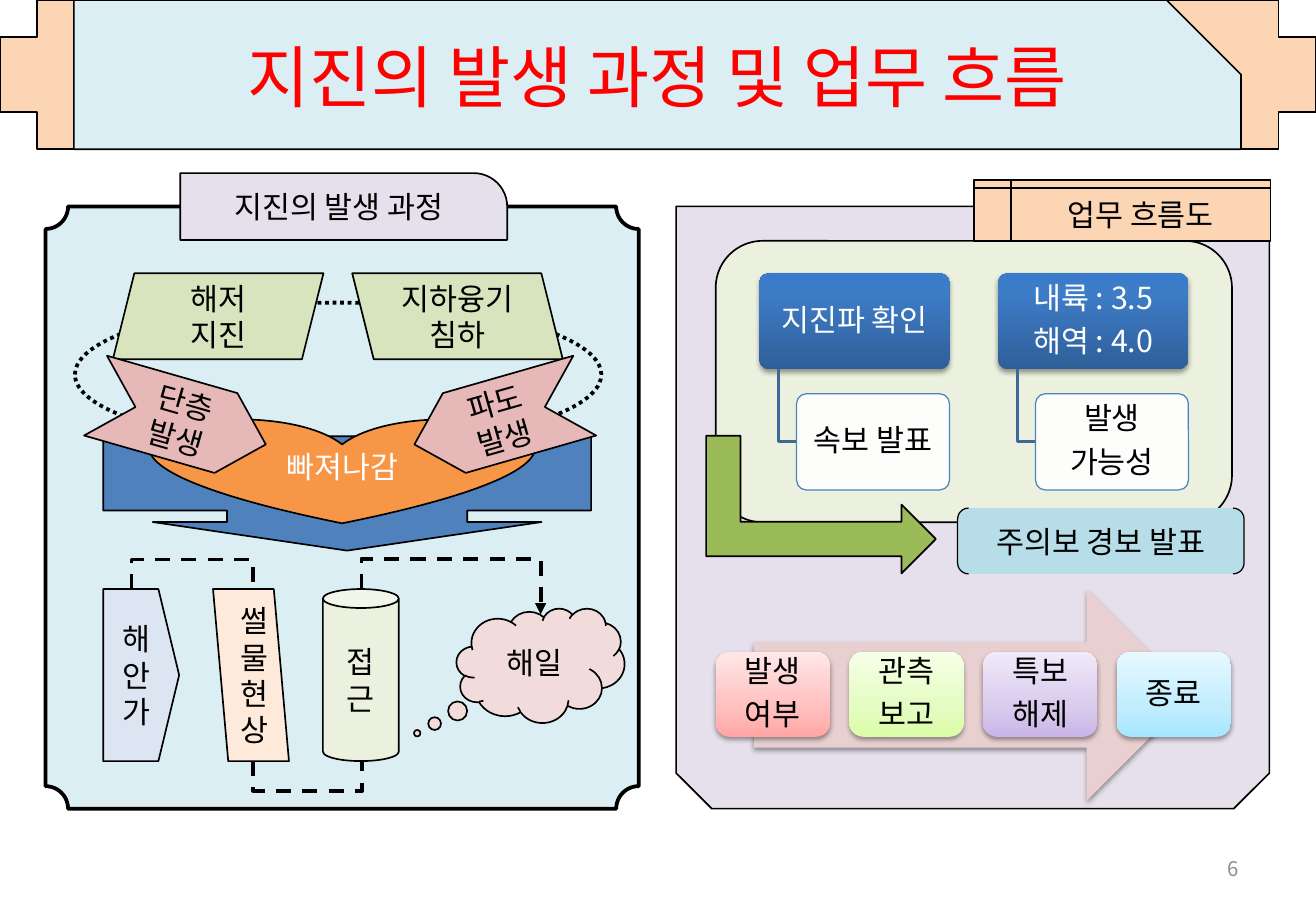
import lxml.etree
import pptx
import pptx.dml.color
import pptx.enum.dml
import pptx.enum.shapes
import pptx.enum.text
import pptx.oxml.ns
import pptx.util

SHAPE = pptx.enum.shapes.MSO_SHAPE
ALIGN = pptx.enum.text.PP_ALIGN
DASH = pptx.enum.dml.MSO_LINE
Pt = pptx.util.Pt
qn = pptx.oxml.ns.qn

FONT = "Noto Sans CJK KR"
COLUMNS, ROWS = 130, 90
CELL = pptx.util.Inches(1) / 12
COLORS = {
    "black": "000000", "white": "FFFFFF", "title": "FF0000", "number": "8C8C8C",
    "peach": "FCD5B5", "sky": "DBEEF4", "lilac": "E6E0EC", "blue": "4F81BD",
    "leaf": "D7E4BD", "orange": "F79646", "rose": "E6B9B8", "coast": "DCE6F2",
    "ebb": "FDEADA", "mint": "EBF1DE", "wave": "F2DCDB", "flow": "E8D0D0",
    "branch": "FDFEFC", "tree": "3F6797", "green": "9BBB59", "alert": "B7DEE8",
}
# Gradients: (position in percent, colour) from bottom to top
GRADIENTS = {
    "red step": ((0, "FFA6A5"), (35, "FFC0BF"), (100, "FFE7E7")),
    "green step": ((0, "DAFDA7"), (35, "E4FCC2"), (100, "F5FFE7")),
    "violet step": ((0, "C9B5E8"), (35, "D8CBEE"), (100, "F0EAF9")),
    "blue step": ((0, "A7E6FF"), (35, "C1EDFF"), (100, "E7F8FF")),
    "head": ((0, "2F5F99"), (80, "3D7CC7"), (100, "3A7CCB")),
}


def cells(*counts):
    return [round(count * CELL) for count in counts]


def rgb(color):
    return pptx.dml.color.RGBColor.from_string(COLORS[color])


def add_element(parent, tag, **attributes):
    return lxml.etree.SubElement(parent, qn(tag), attributes)


def set_line(line, color, width, dash=None):
    if color is None:
        line.fill.background()
        return
    line.color.rgb = rgb(color)
    line.width = Pt(width)
    if dash:
        line.dash_style = dash


def set_fill(shape, fill):
    if fill is None:
        shape.fill.background()
    elif fill in GRADIENTS:
        shape.fill.gradient()
        shape.fill.gradient_angle = 90
        stops = shape._element.spPr.find(qn("a:gradFill")).find(qn("a:gsLst"))
        stops.clear()
        for position, color in GRADIENTS[fill]:
            stop = add_element(stops, "a:gs", pos=str(position * 1000))
            add_element(stop, "a:srgbClr", val=color)
    else:
        shape.fill.solid()
        shape.fill.fore_color.rgb = rgb(fill)


def add_shadow(shape, alpha=38):
    effects = shape._element.spPr.find(qn("a:effectLst"))
    shadow = add_element(effects, "a:outerShdw", blurRad=str(Pt(3.1)),
                         dist=str(Pt(1.7)), dir="5400000", rotWithShape="0")
    color = add_element(shadow, "a:srgbClr", val=COLORS["black"])
    add_element(color, "a:alpha", val=str(alpha * 1000))


def write(shape, text, color="black", size=18, align=ALIGN.CENTER, insets=None, spaced=False):
    frame = shape.text_frame
    frame.text = text
    frame.word_wrap = True
    frame.vertical_anchor = pptx.enum.text.MSO_ANCHOR.MIDDLE
    if insets:
        side, edge = (pptx.util.Inches(inset) for inset in insets)
        frame.margin_left = frame.margin_right = side
        frame.margin_top = frame.margin_bottom = edge
    for paragraph in frame.paragraphs:
        paragraph.alignment = align
        if spaced:
            paragraph.line_spacing = 0.9
            paragraph.space_after = Pt(6.3)
        for run in paragraph.runs:
            run.font.size = Pt(size)
            run.font.name = FONT
            run.font.color.rgb = rgb(color)
            add_element(run._r.get_or_add_rPr(), "a:ea", typeface=FONT)


def add_block(slide, kind, box, fill, text=None, line="black", width=1, dash=None,
              adjust=(), rotation=0, flip=None, shadow=False, **style):
    shape = slide.shapes.add_shape(kind, *cells(*box))
    for index, value in enumerate(adjust):
        shape.adjustments[index] = value
    shape.rotation = rotation
    if flip:
        shape._element.spPr.find(qn("a:xfrm")).set(flip, "1")
    set_fill(shape, fill)
    set_line(shape.line, line, width, dash)
    shape.shadow.inherit = False
    if shadow:
        add_shadow(shape)
    if text:
        write(shape, text, **style)


def add_label(slide, box, text, **style):
    write(slide.shapes.add_textbox(*cells(*box)), text, **style)


def add_u_link(slide, start, end, turn, arrow=False):
    """Dashed link that leaves start vertically, crosses at row turn and enters end."""
    (x1, y1), (x2, y2) = start, end
    rise, run = y2 - y1, x2 - x1
    link = slide.shapes.add_connector(pptx.enum.shapes.MSO_CONNECTOR.ELBOW, 0, 0, 1, 1)
    link.left, link.top, link.width, link.height = cells(
        (x1 + x2 - rise) / 2, (y1 + y2 - run) / 2, rise, run)
    properties = link._element.spPr
    frame = properties.find(qn("a:xfrm"))
    frame.set("rot", str(270 * 60000))
    frame.set("flipH", "1")
    guides = properties.find(qn("a:prstGeom")).get_or_add_avLst()
    add_element(guides, "a:gd", name="adj1", fmla=f"val {round((turn - y1) / rise * 100000)}")
    set_line(link.line, "black", 2.25, DASH.DASH)
    if arrow:
        add_element(properties.find(qn("a:ln")), "a:tailEnd", type="triangle")
    add_element(properties, "a:effectLst")


def add_tree(slide, left, head, branch):
    """Header card with one branch card below it."""
    card = {"adjust": [0.1], "insets": (0.04, 0.03), "spaced": True}
    add_block(slide, SHAPE.ROUNDED_RECTANGLE, (left, 27, 18.8, 9.5), "head", head,
              line=None, shadow=True, color="white", **card)
    (x1, x2), (y1, y2) = cells(left + 1.9, left + 3.7), cells(36.5, 43.6)
    builder = slide.shapes.build_freeform(x1, y1)
    builder.add_line_segments([(x1, y2), (x2, y2)], close=False)
    stem = builder.convert_to_shape()
    stem.fill.background()
    set_line(stem.line, "tree", 2)
    stem.shadow.inherit = False
    add_block(slide, SHAPE.ROUNDED_RECTANGLE, (left + 3.7, 38.9, 15.1, 9.5), "branch", branch,
              line="blue", width=0.75, **card)


def add_header(slide):
    add_block(slide, SHAPE.CROSS, (0, 0, COLUMNS, 14.75), "peach")
    add_block(slide, SHAPE.SNIP_1_RECTANGLE, (7.3, 0, 115.3, 14.75), "sky", adjust=[0.5])
    add_label(slide, (6.4, 0, 117, 15), "지진의 발생 과정 및 업무 흐름", color="title", size=40)
    add_label(slide, (93.1, 83.4, 30.4, 4.8), "6", color="number", size=12, align=ALIGN.RIGHT)


def add_process(slide):
    add_block(slide, SHAPE.PLAQUE, (4.5, 20.4, 58.6, 59.5), "sky", width=2.25, adjust=[0.038])
    add_block(slide, SHAPE.OVAL, (7.4, 29.9, 52, 14.2), None, width=2.25, dash=DASH.ROUND_DOT)
    add_block(slide, SHAPE.ROUND_1_RECTANGLE, (17.8, 17.1, 32.3, 6.6), "lilac",
              "지진의 발생 과정", adjust=[0.5])
    add_block(slide, SHAPE.DOWN_ARROW_CALLOUT, (10.2, 43.1, 48.2, 11.3), "blue",
              adjust=[2.099, 1.7, 0.25, 0.65])

    # Causes, mirrored left and right
    for left, text, flip in ((11.15, "해저\n지진", None), (34.8, "지하융기\n침하", "flipH")):
        add_block(slide, SHAPE.PARALLELOGRAM, (left, 27, 20.8, 8.5), "leaf", text, flip=flip)
    add_block(slide, SHAPE.HEART, (14.9, 41.3, 37.8, 10.4), "orange", "빠져나감", color="white")
    for left, text, turn, flip in ((9.1, "단층\n발생", 16, None),
                                   (40.6, "파도\n발생", 344, "flipH")):
        add_block(slide, SHAPE.CHEVRON, (left, 37.4, 17.5, 8.2), "rose", text,
                  rotation=turn, flip=flip)

    # Stages that lead to the tidal wave
    stages = ((SHAPE.PENTAGON, "coast", "해안가", [0.273], None),
              (SHAPE.FLOWCHART_DATA, "ebb", "썰물현상", [], "flipH"),
              (SHAPE.CAN, "mint", "접근", [], None))
    for index, (kind, fill, text, adjust, flip) in enumerate(stages):
        add_block(slide, kind, (10.2 + 10.85 * index, 58.2, 7.5, 17), fill, text,
                  adjust=adjust, flip=flip)
    add_block(slide, SHAPE.CLOUD_CALLOUT, (45.1, 60.1, 16.6, 11.3), "wave", "해일",
              adjust=[-0.734, 0.592])
    add_u_link(slide, (13, 58.2), (25, 58.35), 55.3)
    add_u_link(slide, (25, 75.15), (35.8, 75.3), 78.1)
    add_u_link(slide, (35.7, 58.2), (53.4, 60.7), 55.2, arrow=True)


def add_workflow(slide):
    add_block(slide, SHAPE.SNIP_2_SAME_RECTANGLE, (66.8, 20.4, 58.6, 59.5), "lilac",
              adjust=[0.06, 0], flip="flipV")
    add_block(slide, SHAPE.ROUNDED_RECTANGLE, (70.7, 23.8, 51, 27.8), "mint")
    add_block(slide, SHAPE.FLOWCHART_INTERNAL_STORAGE, (96.2, 17.8, 29.3, 6), "peach",
              "업무 흐름도")

    # Steps along the wide arrow
    add_block(slide, SHAPE.RIGHT_ARROW, (74.5, 58.2, 43.3, 20.9), "flow", line=None, shadow=True)
    steps = (("red step", "발생\n여부"), ("green step", "관측\n보고"),
             ("violet step", "특보\n해제"), ("blue step", "종료"))
    for index, (fill, text) in enumerate(steps):
        add_block(slide, SHAPE.ROUNDED_RECTANGLE, (70.7 + 13.2 * index, 64.4, 11.3, 8.4), fill,
                  text, line=None, shadow=True, insets=(0.07, 0.07), spaced=True)

    # Checks and the resulting alert
    add_tree(slide, 75, "지진파 확인", "속보 발표")
    add_tree(slide, 98.6, "내륙 : 3.5\n해역 : 4.0", "발생\n가능성")
    add_block(slide, SHAPE.BENT_UP_ARROW, (74.3, 38.5, 13.6, 22.7), "green", rotation=90)
    add_block(slide, SHAPE.DOUBLE_BRACKET, (94.6, 50.2, 28.3, 6.5), "alert",
              "주의보 경보 발표", width=0.75)


def main():
    deck = pptx.Presentation()
    deck.slide_width, deck.slide_height = cells(COLUMNS, ROWS)
    slide = deck.slides.add_slide(deck.slide_layouts[6])
    add_header(slide)
    add_process(slide)
    add_workflow(slide)
    deck.save("out.pptx")


if __name__ == "__main__":
    main()
